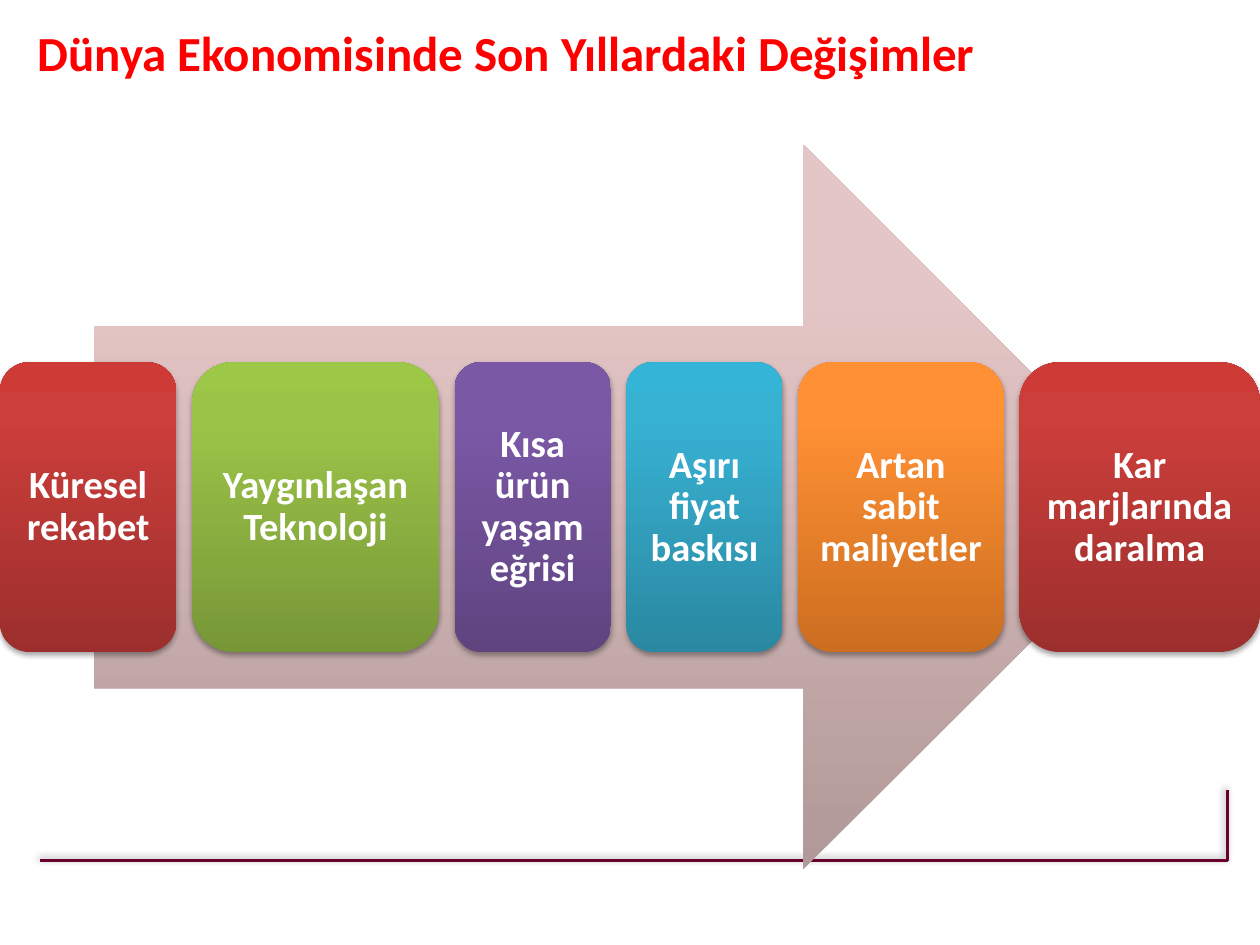
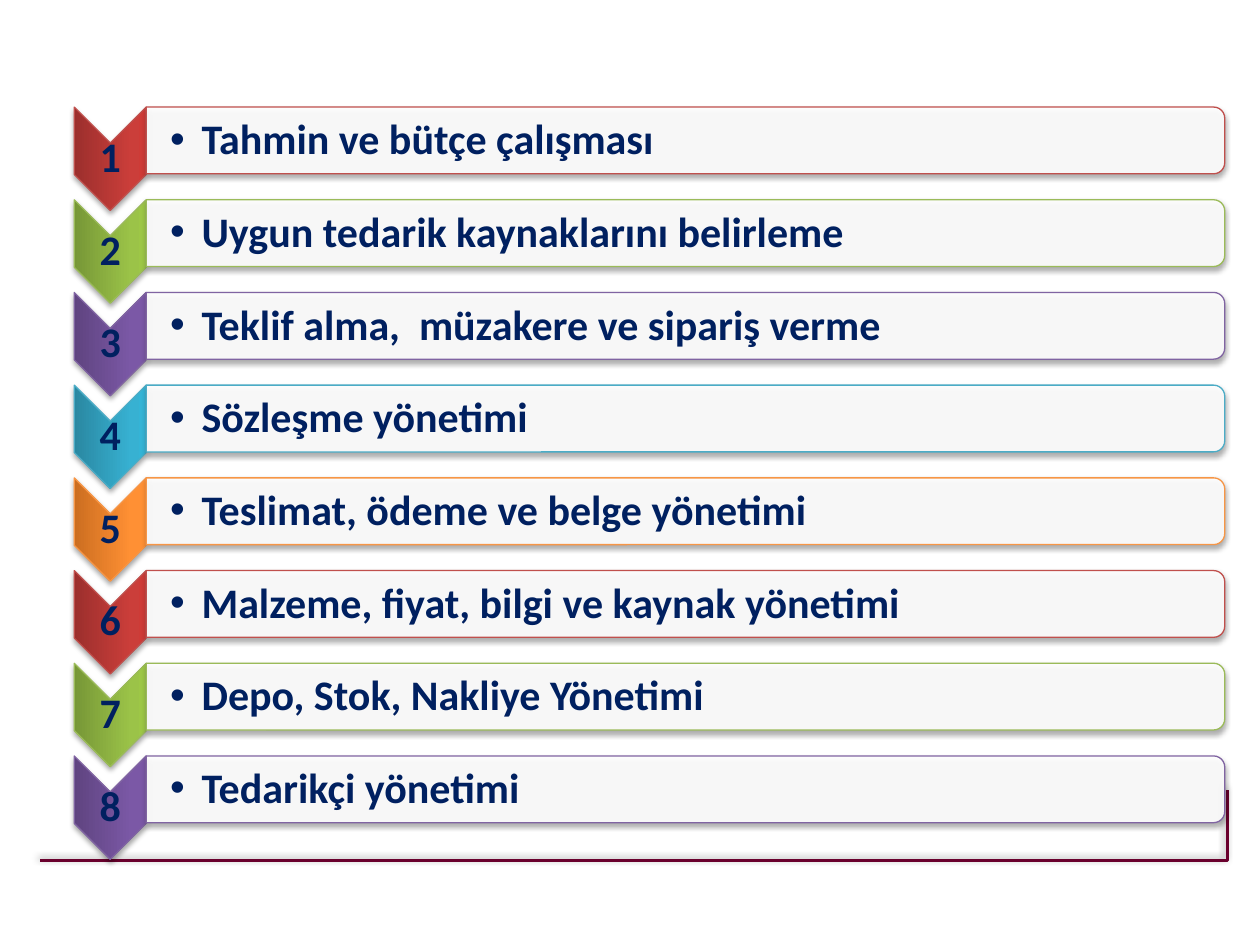
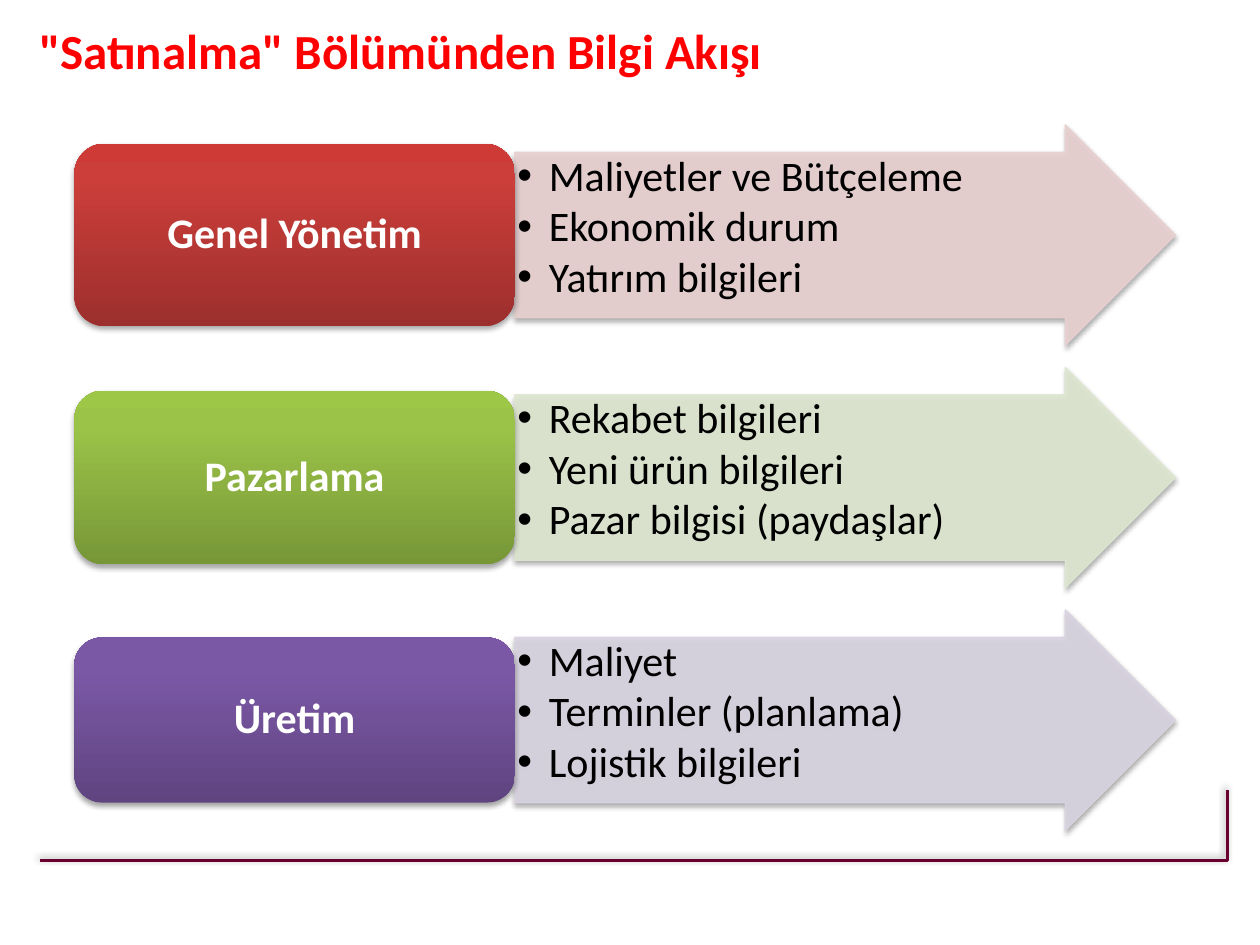
from lxml import etree
from pptx import Presentation, util as u
from pptx.dml.color import RGBColor
from pptx.enum import shapes, text
from pptx.oxml import ns

FONT = "Calibri"
WHITE, BLACK, NAVY, RED, MAROON = "FFFFFF", "000000", "002060", "FF0000", "6A002D"
ACCENTS = [
    {"grad": ("9C2F2D", "CB3E3A", "CE3B37"), "edge": "C0504D", "tint": "E8D0D0"},
    {"grad": ("779737", "9BC348", "9DC746"), "edge": "9BBB59", "tint": "DEE7D1"},
    {"grad": ("5F4480", "7B58A6", "7C57A8"), "edge": "8064A2", "tint": "D8D3E0"},
    {"grad": ("2A88A2", "37B1D2", "34B4D6"), "edge": "4BACC6"},
    {"grad": ("CC6E20", "FF9034", "FF9136"), "edge": "F79646"},
]
PALE_ARROW = ("B09998", "E5C6C6", "E6C7C6")
SOFT_SHADOW = (35, 3.1, 1.8, 90)
CORNER_SHADOW = (40, 4, 3, 225)

PRESSURES = [
    ("Küresel rekabet", 1.4),
    ("Yaygınlaşan Teknoloji", 1.96),
    ("Kısa ürün yaşam eğrisi", 1.24),
    ("Aşırı fiyat baskısı", 1.24),
    ("Artan sabit maliyetler", 1.63),
    ("Kar marjlarında daralma", 1.91),
]
STEPS = [
    "Tahmin ve bütçe çalışması",
    "Uygun tedarik kaynaklarını belirleme",
    "Teklif alma,  müzakere ve sipariş verme",
    "Sözleşme yönetimi",
    "Teslimat, ödeme ve belge yönetimi",
    "Malzeme, fiyat, bilgi ve kaynak yönetimi",
    "Depo, Stok, Nakliye Yönetimi",
    "Tedarikçi yönetimi",
]
FLOWS = [
    ("Genel Yönetim", 1.45, ["Maliyetler ve Bütçeleme", "Ekonomik durum", "Yatırım bilgileri"]),
    ("Pazarlama", 1.38, ["Rekabet bilgileri", "Yeni ürün bilgileri", "Pazar bilgisi (paydaşlar)"]),
    ("Üretim", 1.31, ["Maliyet", "Terminler (planlama)", "Lojistik bilgileri"]),
]


def rgb(value):
    return RGBColor.from_string(value)


def sub(parent, tag, **attributes):
    return etree.SubElement(parent, ns.qn(tag), {k: str(v) for k, v in attributes.items()})


def inches(*lengths):
    return [u.Inches(length) for length in lengths]


def solid(fill, holder, color, alpha):
    fill.solid()
    fill.fore_color.rgb = rgb(color)
    if alpha < 100:
        sub(holder.find(ns.qn("a:solidFill"))[0], "a:alpha", val=alpha * 1000)


def gradient(shape, colors):
    shape.fill.solid()
    plain = shape.element.spPr.find(ns.qn("a:solidFill"))
    blend = etree.Element(ns.qn("a:gradFill"), {"rotWithShape": "1"})
    stops = sub(blend, "a:gsLst")
    for place, color in zip((0, 80, 100), colors):
        sub(sub(stops, "a:gs", pos=place * 1000), "a:srgbClr", val=color)
    sub(blend, "a:lin", ang=270 * 60000, scaled=0)
    plain.getparent().replace(plain, blend)


def cast_shadow(shape, opacity, blur, distance, angle):
    effects = shape.element.spPr.find(ns.qn("a:effectLst"))
    outer = sub(effects, "a:outerShdw", blurRad=u.Pt(blur), dist=u.Pt(distance),
                dir=angle * 60000, rotWithShape=0)
    sub(sub(outer, "a:srgbClr", val=BLACK), "a:alpha", val=opacity * 1000)


def finish(shape, fill=None, edge=None, alpha=100, edge_alpha=100, weight=0.75, shadow=SOFT_SHADOW):
    shape.shadow.inherit = False
    if fill is None:
        shape.fill.background()
    elif isinstance(fill, tuple):
        gradient(shape, fill)
    else:
        solid(shape.fill, shape.element.spPr, fill, alpha)
    if edge:
        shape.line.width = u.Pt(weight)
        solid(shape.line.fill, shape.element.spPr.find(ns.qn("a:ln")), edge, edge_alpha)
    else:
        shape.line.fill.background()
    if shadow:
        cast_shadow(shape, *shadow)


def add_shape(slide, kind, box, upright=True, **look):
    left, top, width, height = box
    if not upright:
        left, top = left + (width - height) / 2, top + (height - width) / 2
        width, height = height, width
    shape = slide.shapes.add_shape(kind, *inches(left, top, width, height))
    shape.rotation = 0 if upright else 90
    finish(shape, **look)
    return shape


def write(shape, lines, size=24, color=WHITE, bold=True, align=text.PP_ALIGN.CENTER,
          anchor=text.MSO_ANCHOR.MIDDLE, insets=(0.1, 0.05, 0.1, 0.05),
          spacing=0.9, after=0, bullet=False):
    frame = shape.text_frame
    frame.word_wrap = True
    frame.auto_size = text.MSO_AUTO_SIZE.NONE
    frame.vertical_anchor = anchor
    (frame.margin_left, frame.margin_top,
     frame.margin_right, frame.margin_bottom) = inches(*insets)
    for index, line in enumerate(lines):
        paragraph = frame.add_paragraph() if index else frame.paragraphs[0]
        if bullet:
            properties = paragraph._p.get_or_add_pPr()
            properties.set("marL", str(u.Inches(0.25)))
            properties.set("indent", str(u.Inches(-0.25)))
            sub(properties, "a:buFont", typeface="Arial")
            sub(properties, "a:buChar", char="•")
        paragraph.alignment = align
        paragraph.line_spacing = spacing
        paragraph.space_after = u.Pt(after)
        run = paragraph.add_run()
        run.text = line
        run.font.name = FONT
        run.font.size = u.Pt(size)
        run.font.bold = bold
        run.font.color.rgb = rgb(color)


def add_label(slide, box, line, **format):
    write(slide.shapes.add_textbox(*inches(*box)), [line], **format)


def add_slide(deck, title=None, box=None):
    slide = deck.slides.add_slide(deck.slide_layouts[5 if title else 6])
    draw_corner(slide, (0.32, 6.27, 9.42, 0.56))
    if title:
        heading = slide.shapes.title
        heading.left, heading.top, heading.width, heading.height = inches(*box)
        write(heading, [title], size=28, color=RED, align=text.PP_ALIGN.LEFT,
              anchor=text.MSO_ANCHOR.TOP, spacing=1.0)
    return slide


def draw_corner(slide, box):
    left, top, width, height = box
    right, bottom = left + width, top + height
    builder = slide.shapes.build_freeform(*inches(left, bottom))
    builder.add_line_segments([inches(right, bottom), inches(right, top)], close=False)
    finish(builder.convert_to_shape(), edge=MAROON, weight=1.75, shadow=CORNER_SHADOW)


def draw_pressures(slide, box):
    left, top, width, height = box
    add_shape(slide, shapes.MSO_SHAPE.RIGHT_ARROW,
              (left + 0.075 * width, top, 0.85 * width, height), fill=PALE_ARROW, shadow=None)
    gap = (width - sum(size for _, size in PRESSURES)) / (len(PRESSURES) - 1)
    for index, (pressure, size) in enumerate(PRESSURES):
        card = add_shape(slide, shapes.MSO_SHAPE.ROUNDED_RECTANGLE,
                         (left, top + 0.3 * height, size, 0.4 * height),
                         fill=ACCENTS[index % len(ACCENTS)]["grad"])
        write(card, [pressure], size=22, insets=(0.09,) * 4)
        left += size + gap


def draw_steps(slide, box):
    left, top, width, height = box
    marker_width, marker_height, bar_height = 0.57, 0.82, 0.53
    pitch = (height - marker_height) / (len(STEPS) - 1)
    bar_left, bar_width = left + marker_width, width - marker_width
    for index, step in enumerate(STEPS):
        y = top + index * pitch
        accent = ACCENTS[index % len(ACCENTS)]
        add_shape(slide, shapes.MSO_SHAPE.CHEVRON, (left, y, marker_width, marker_height),
                  upright=False, fill=accent["grad"], edge=accent["edge"])
        add_label(slide, (left, y + 0.29, marker_width, 0.24), str(index + 1),
                  color=NAVY, insets=(0.02,) * 4)
        add_shape(slide, shapes.MSO_SHAPE.ROUND_2_SAME_RECTANGLE,
                  (bar_left, y, bar_width, bar_height), upright=False,
                  fill=WHITE, alpha=90, edge=accent["edge"])
        add_label(slide, (bar_left, y + 0.03, bar_width - 0.02, 0.48), step, color=NAVY,
                  align=text.PP_ALIGN.LEFT, insets=(0.19, 0.02, 0.02, 0.02), bullet=True)


def draw_flows(slide, box):
    left, top, width, height = box
    card_width, arrow_height = 0.4 * width, 1.75
    pitch = (height - arrow_height) / (len(FLOWS) - 1)
    for index, (department, card_height, topics) in enumerate(FLOWS):
        y = top + index * pitch
        accent = ACCENTS[index]
        arrow = add_shape(slide, shapes.MSO_SHAPE.RIGHT_ARROW,
                          (left + card_width, y, width - card_width, arrow_height),
                          fill=accent["tint"], alpha=90, edge=accent["tint"], edge_alpha=90)
        arrow.adjustments[0] = 0.75
        write(arrow, topics, color=BLACK, bold=False, align=text.PP_ALIGN.LEFT,
              anchor=text.MSO_ANCHOR.TOP, insets=(0.02,) * 4, after=3, bullet=True)
        card = add_shape(slide, shapes.MSO_SHAPE.ROUNDED_RECTANGLE,
                         (left, y + (arrow_height - card_height) / 2, card_width, card_height),
                         fill=accent["grad"])
        write(card, [department])


def main():
    deck = Presentation()
    deck.slide_width, deck.slide_height = inches(10, 7.5)
    changes = add_slide(deck, "Dünya Ekonomisinde Son Yıllardaki Değişimler", (0.2, 0.13, 8.58, 0.57))
    draw_pressures(changes, (0, 1.15, 10, 5.75))
    draw_steps(add_slide(deck), (0.59, 0.85, 9.13, 5.97))
    information = add_slide(deck, '"Satınalma" Bölümünden Bilgi Akışı', (0.21, 0.11, 8.81, 0.57))
    draw_flows(information, (0.59, 0.99, 8.74, 5.6))
    deck.save("out.pptx")


if __name__ == "__main__":
    main()
